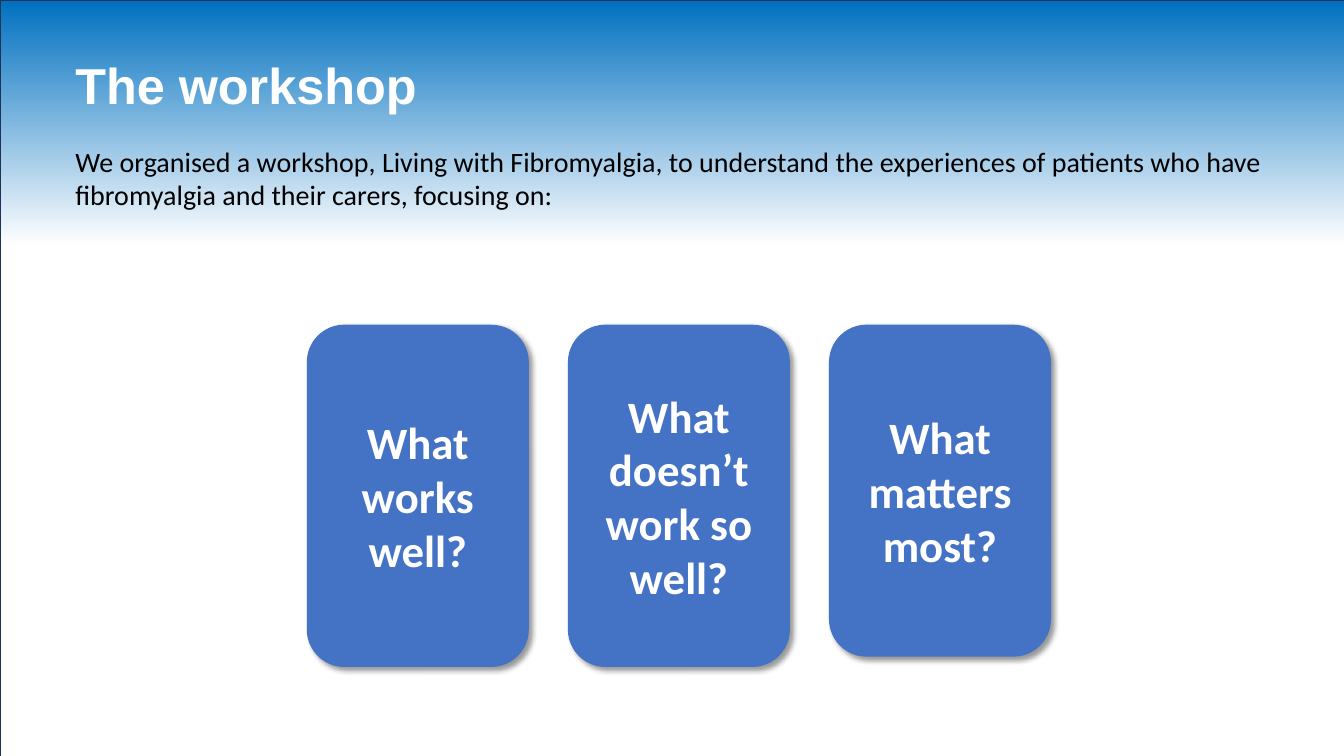
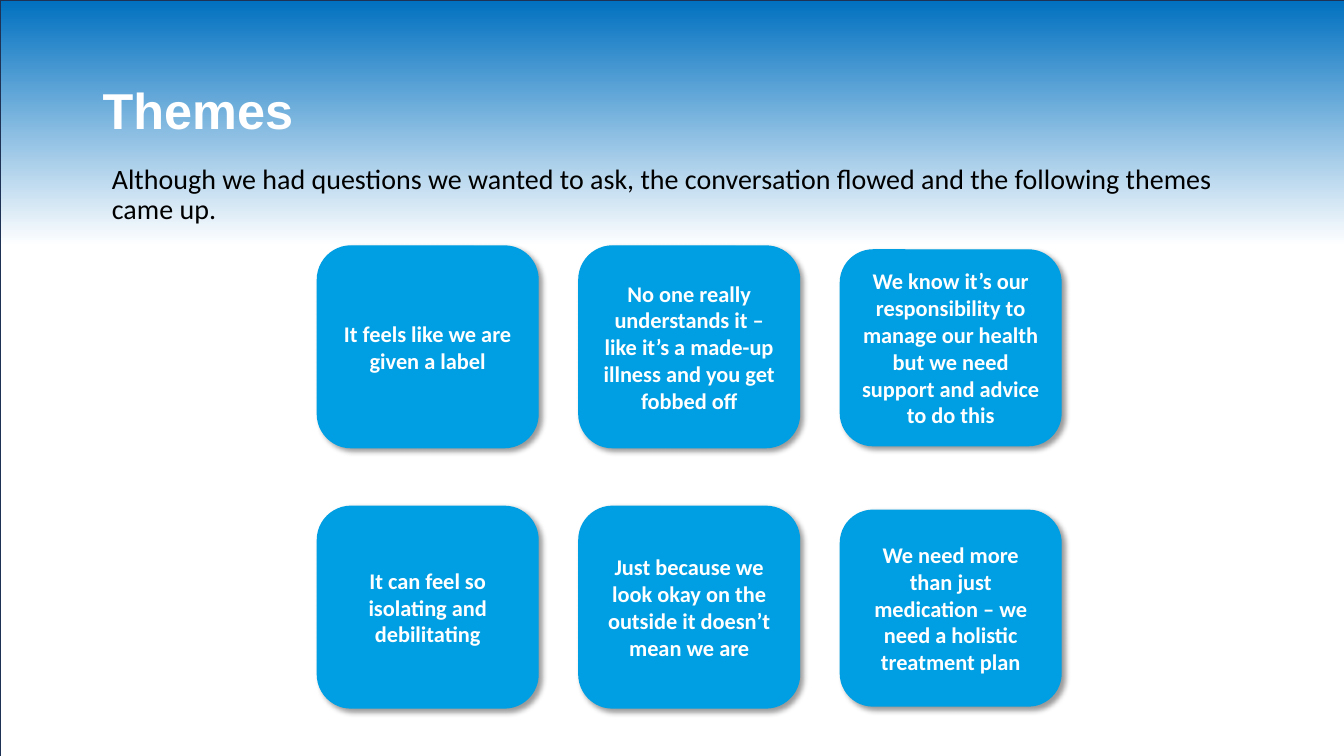
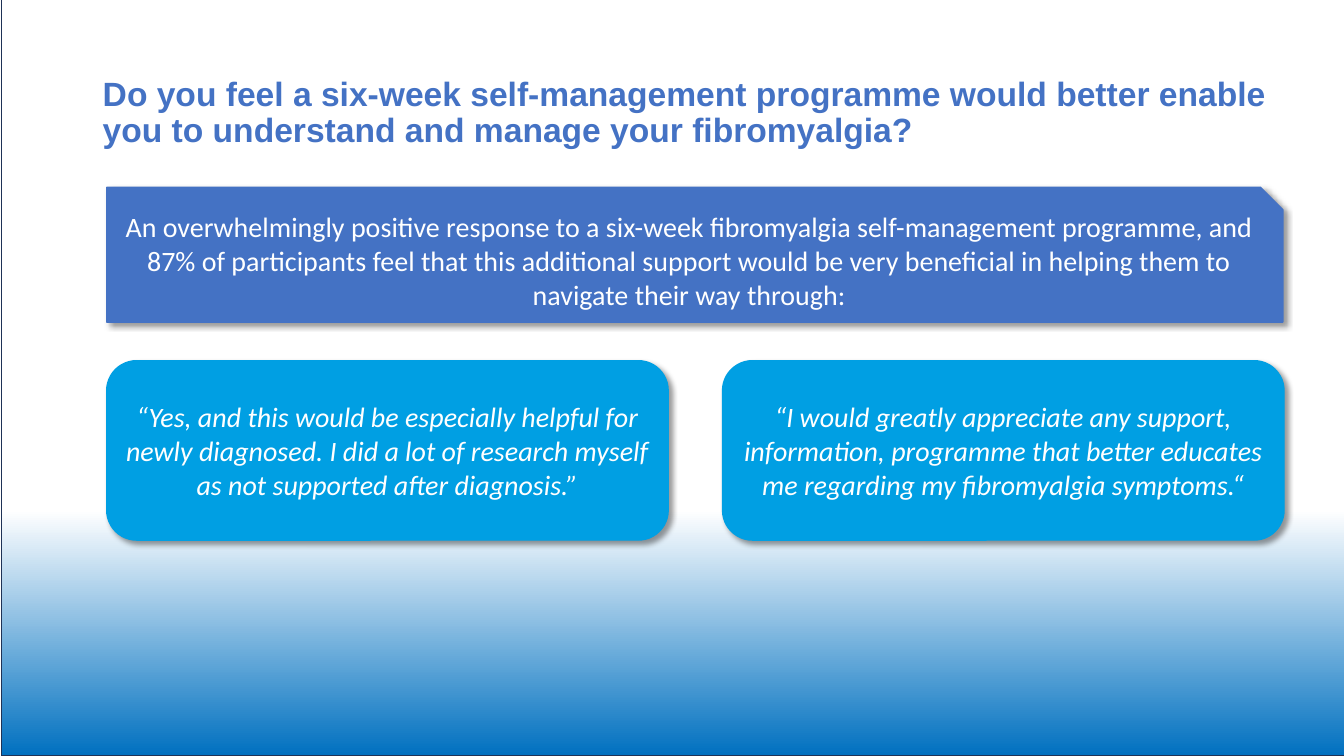
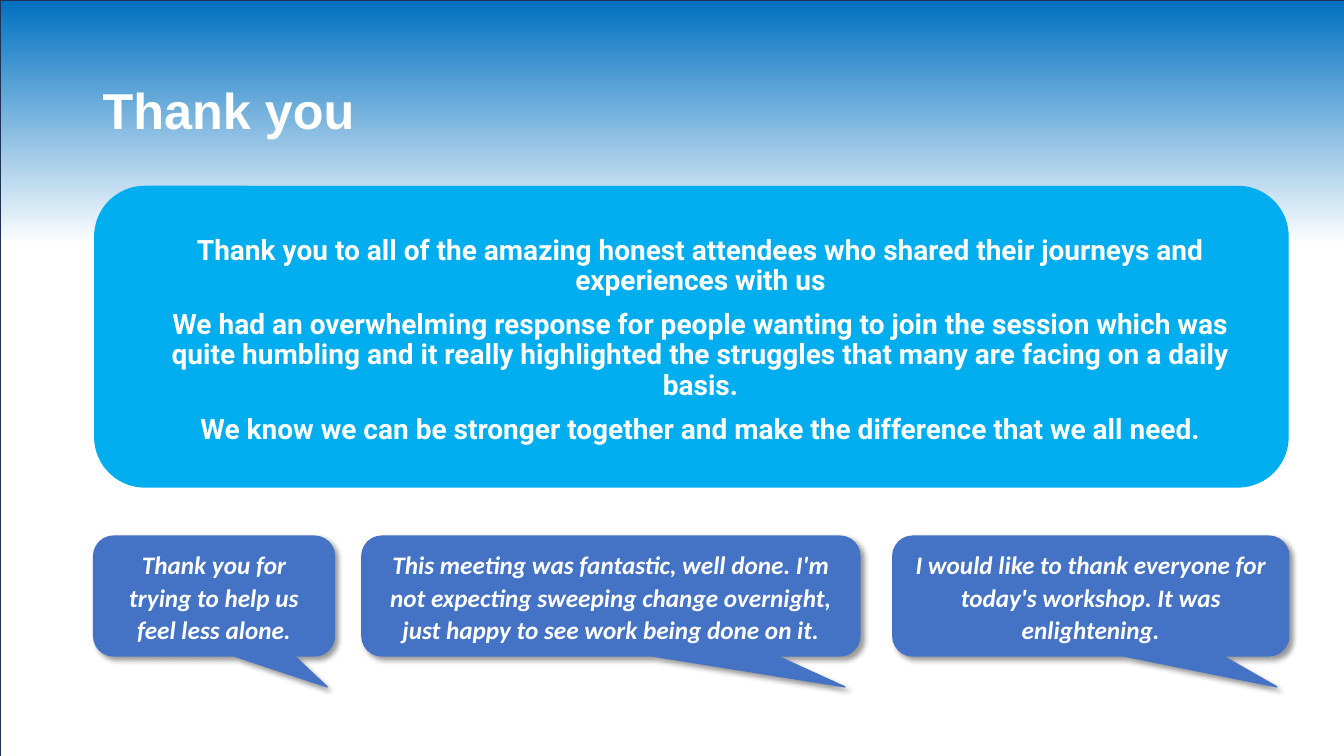
"""Build four slides on a fibromyalgia workshop."""
from dataclasses import dataclass
from typing import NamedTuple

from lxml.etree import SubElement
from pptx import Presentation
from pptx.dml.color import RGBColor as Rgb
from pptx.enum.shapes import MSO_SHAPE as Shape
from pptx.enum.text import MSO_ANCHOR as Anchor, PP_ALIGN as Align
from pptx.oxml.ns import qn
from pptx.shapes.autoshape import Shape as Auto
from pptx.slide import Slide
from pptx.util import Cm, Pt


@dataclass(frozen=True)
class Theme:
    white: str = "FFFFFF"
    black: str = "000000"
    blue: str = "4472C4"
    sky: str = "009FE3"
    cyan: str = "00AEEF"
    deep: str = "0070C0"
    navy: str = "1E3256"
    head: str = "Arial"
    body: str = "Calibri"
    thanks: str = "Roboto"
    title: int = 36
    ask: int = 24
    large: int = 32
    text: int = 20
    quote: int = 18
    small: int = 16


T = Theme()


class Box(NamedTuple):
    left: float
    top: float
    width: float
    height: float


@dataclass(frozen=True)
class Style:
    size: int = T.text
    color: str = T.white
    font: str = T.body
    bold: bool = False
    slant: bool = False
    align: Align = Align.CENTER
    anchor: Anchor = Anchor.MIDDLE
    line: float | None = None
    before: int = 0
    after: int = 0


@dataclass(frozen=True)
class Card:
    box: Box
    text: str
    fill: str
    style: Style
    kind: Shape = Shape.ROUNDED_RECTANGLE


HEAD = Style(T.title, font=T.head, bold=True, align=Align.LEFT, line=0.9)
ASK = Style(T.ask, T.blue, T.head, True, align=Align.LEFT, line=0.9)
LEAD = Style(color=T.black, align=Align.LEFT, anchor=Anchor.TOP)
NOTE = Style(color=T.black, align=Align.LEFT, anchor=Anchor.TOP, line=0.9, before=10)
LARGE = Style(T.large, bold=True)
SMALL = Style(T.small, bold=True)
PLAIN = Style()
QUOTE = Style(slant=True)
THANKS = Style(font=T.thanks, bold=True, anchor=Anchor.TOP, line=0.9, before=10)
VOICE = Style(T.quote, bold=True, slant=True, line=1.07, after=8)
TITLE = Box(2.34, 1.02, 29.21, 3.68)


def cm(box: Box) -> list[Cm]:
    return [Cm(n) for n in box]


def write(shape: Auto, style: Style, *lines: str) -> None:
    frame = shape.text_frame
    frame.word_wrap = True
    frame.vertical_anchor = style.anchor
    for i, line in enumerate(lines):
        para = frame.add_paragraph() if i else frame.paragraphs[0]
        para.alignment = style.align
        para.line_spacing = style.line
        para.space_before, para.space_after = Pt(style.before), Pt(style.after)
        run = para.add_run()
        run.text = line
        font = run.font
        font.name, font.size = style.font, Pt(style.size)
        font.bold, font.italic = style.bold, style.slant
        font.color.rgb = Rgb.from_string(style.color)


def label(slide: Slide, box: Box, style: Style, *lines: str) -> None:
    write(slide.shapes.add_textbox(*cm(box)), style, *lines)


def block(slide: Slide, kind: Shape, box: Box, fill: str) -> Auto:
    shape = slide.shapes.add_shape(kind, *cm(box))
    shape.shadow.inherit = False
    shape.fill.solid()
    shape.fill.fore_color.rgb = Rgb.from_string(fill)
    shape.line.color.rgb = Rgb.from_string(fill)
    shape.line.width = Pt(1)
    return shape


def shade(shape: Auto) -> None:
    effects = shape.element.spPr.find(qn("a:effectLst"))
    outer = SubElement(effects, qn("a:outerShdw"), blurRad=str(Pt(4)),
                       dist=str(Pt(3)), dir="2700000", algn="tl", rotWithShape="0")
    color = SubElement(outer, qn("a:srgbClr"), val=T.black)
    SubElement(color, qn("a:alpha"), val="40000")


def draw(slide: Slide, card: Card) -> None:
    shape = block(slide, card.kind, card.box, card.fill)
    if card.kind == Shape.ROUNDED_RECTANGULAR_CALLOUT:
        for i, value in enumerate((0.47, 0.758, 0.167)):
            shape.adjustments[i] = value
    shade(shape)
    write(shape, card.style, card.text)


def start(deck: Presentation, title: str, box: Box = TITLE,
          style: Style = HEAD, flip: bool = False) -> Slide:
    slide = deck.slides.add_slide(deck.slide_layouts[6])
    area = Box(0.03, -0.91, 34.77, 19.96) if flip else Box(0, 0, 34.77, 19.96)
    wash = block(slide, Shape.RECTANGLE, area, T.white)
    wash.rotation = 180 if flip else 0
    wash.line.color.rgb = Rgb.from_string(T.navy)
    wash.fill.gradient()
    wash.fill.gradient_angle = 270
    for stop, color, place in zip(wash.fill.gradient_stops, (T.deep, T.white), (0, 0.31)):
        stop.color.rgb = Rgb.from_string(color)
        stop.position = place
    label(slide, box, style, title)
    return slide


def workshop(deck: Presentation) -> None:
    slide = start(deck, "The workshop", Box(1.65, 0.38, 32.49, 3.68))
    label(slide, Box(1.65, 3.51, 30.58, 1.96), LEAD,
          "We organised a workshop, Living with Fibromyalgia, to understand the "
          "experiences of patients who have fibromyalgia and their carers, focusing on:")
    cards = (("What works well?", 8.59), ("What doesn’t work so well?", 8.59),
             ("What matters most?", 8.33))
    for i, (text, height) in enumerate(cards):
        draw(slide, Card(Box(7.75 + 6.58 * i, 8.2, 5.56, height), text, T.blue, LARGE))


def themes(deck: Presentation) -> None:
    slide = start(deck, "Themes")
    label(slide, Box(2.57, 4.04, 29.21, 3.23), NOTE,
          "Although we had questions we wanted to ask, the conversation flowed "
          "and the following themes came up.")
    texts = (
        "It feels like we are given a label",
        "No one really understands it – like it’s a made-up illness and you get fobbed off",
        "We know it’s our responsibility to manage our health but we need support "
        "and advice to do this",
        "It can feel so isolating and debilitating",
        "Just because we look okay on the outside it doesn’t mean we are",
        "We need more than just medication – we need a holistic treatment plan",
    )
    for i, text in enumerate(texts):
        row, col = divmod(i, 3)
        drop, height = (0.1, 4.93) if col == 2 else (0, 5.08)
        box = Box(8 + 6.59 * col, 6.2 + 6.56 * row + drop, 5.56, height)
        draw(slide, Card(box, text, T.sky, SMALL))


def survey(deck: Presentation) -> None:
    slide = start(deck, "Do you feel a six-week self-management programme would better "
                  "enable you to understand and manage your fibromyalgia?",
                  TITLE._replace(width=30.15), ASK, True)
    draw(slide, Card(
        Box(2.69, 4.72, 29.64, 3.4),
        "An overwhelmingly positive response to a six-week fibromyalgia self-management "
        "programme, and 87% of participants feel that this additional support would be "
        "very beneficial in helping them to navigate their way through:",
        T.blue, PLAIN, Shape.SNIP_1_RECTANGLE))
    quotes = (
        "“Yes, and this would be especially helpful for newly diagnosed. I did a lot of "
        "research myself as not supported after diagnosis.”",
        "“I would greatly appreciate any support, information, programme that better "
        "educates me regarding my fibromyalgia symptoms.“",
    )
    for i, text in enumerate(quotes):
        draw(slide, Card(Box(2.69 + 15.52 * i, 9.09, 14.15, 4.52), text, T.sky, QUOTE))


def thanks(deck: Presentation) -> None:
    slide = start(deck, "Thank you")
    block(slide, Shape.FLOWCHART_ALTERNATE_PROCESS, Box(2.39, 4.7, 30.07, 7.57), T.cyan)
    label(slide, Box(3.43, 5.82, 28.45, 7.57), THANKS,
          "Thank you to all of the amazing honest attendees who shared their journeys "
          "and experiences with us",
          "We had an overwhelming response for people wanting to join the session which "
          "was quite humbling and it really highlighted the struggles that many are "
          "facing on a daily basis.",
          "We know we can be stronger together and make the difference that we all need.")
    voices = (
        (2.36, 6.07, "Thank you for trying to help us feel less alone."),
        (9.12, 12.55, "This meeting was fantastic, well done. I'm not expecting sweeping "
         "change overnight, just happy to see work being done on it."),
        (22.5, 9.98, "I would like to thank everyone for today's workshop. "
         "It was enlightening."),
    )
    for left, width, text in voices:
        draw(slide, Card(Box(left, 13.51, width, 3.02), text, T.blue, VOICE,
                         Shape.ROUNDED_RECTANGULAR_CALLOUT))


def main() -> None:
    deck = Presentation()
    deck.slide_width, deck.slide_height = Cm(33.87), Cm(19.05)
    for make in (workshop, themes, survey, thanks):
        make(deck)
    deck.save("out.pptx")


if __name__ == "__main__":
    main()
